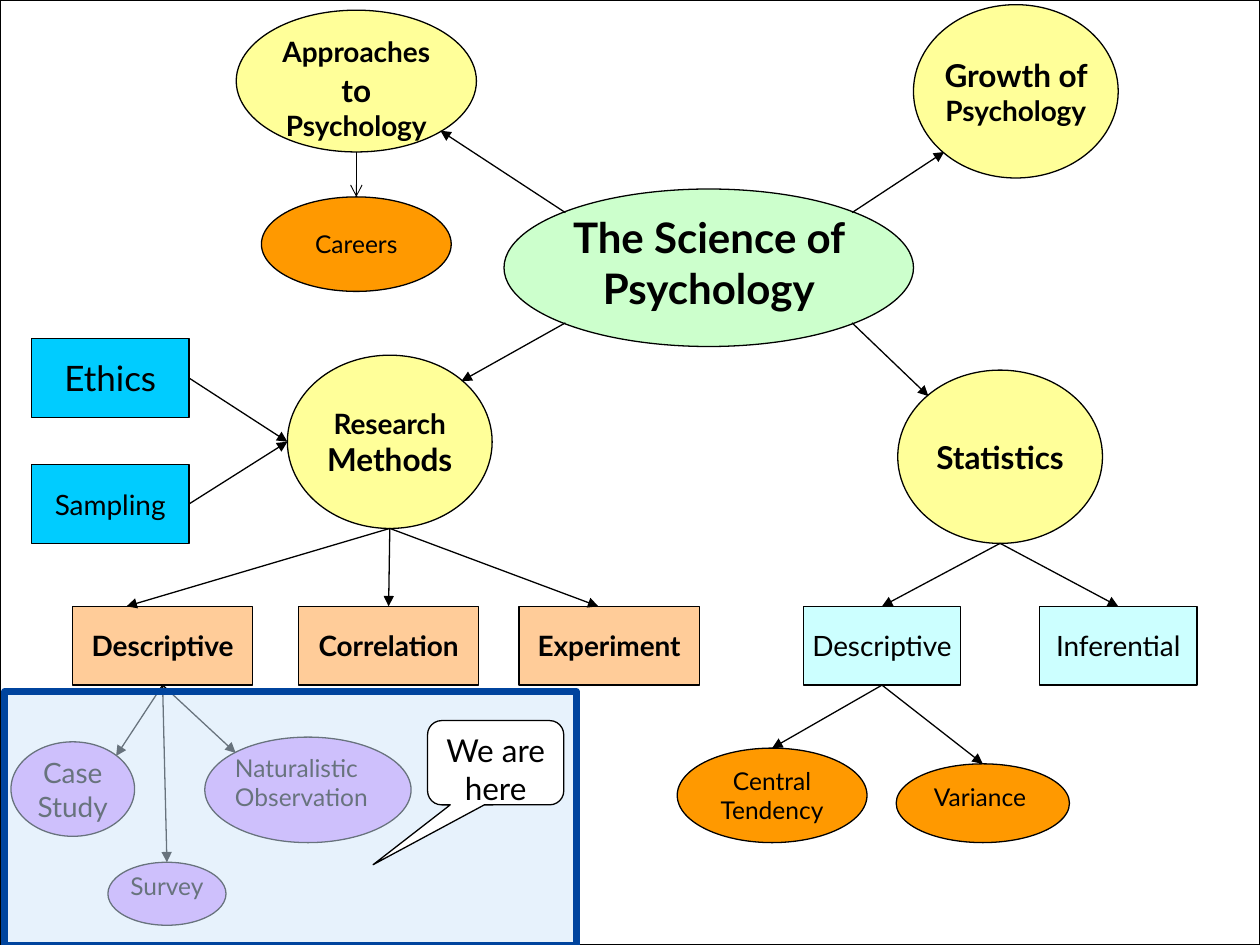
from lxml import etree
from pptx import Presentation
from pptx.dml.color import RGBColor
from pptx.enum.shapes import MSO_CONNECTOR, MSO_SHAPE
from pptx.enum.text import MSO_ANCHOR, PP_ALIGN
from pptx.oxml.ns import qn
from pptx.util import Inches, Pt

RECT, OVAL = MSO_SHAPE.RECTANGLE, MSO_SHAPE.OVAL
CALLOUT = MSO_SHAPE.ROUNDED_RECTANGULAR_CALLOUT
STRAIGHT = MSO_CONNECTOR.STRAIGHT
TOP, MIDDLE = MSO_ANCHOR.TOP, MSO_ANCHOR.MIDDLE
LEFT, CENTER = PP_ALIGN.LEFT, PP_ALIGN.CENTER
BLACK, WHITE = "000000", "FFFFFF"
GREEN, YELLOW, PEACH, VIOLET = "CCFFCC", "FFFF99", "FFCC99", "CC99FF"
AQUA, CYAN, ORANGE = "CCFFFF", "00CCFF", "FF9900"

prs = Presentation()
prs.slide_width, prs.slide_height = Inches(10), Inches(7.5)
slide = prs.slides.add_slide(prs.slide_layouts[5])
CELL = prs.slide_width / 160  # grid of 160 columns by 120 rows


def add_box(kind, place, fill, line=BLACK, weight=0.75):
    box = slide.shapes.add_shape(kind, *(round(v * CELL) for v in place))
    box.shadow.inherit = False
    box.fill.solid()
    box.fill.fore_color.rgb = RGBColor.from_string(fill)
    box.line.color.rgb = RGBColor.from_string(line)
    box.line.width = Pt(weight)
    return box


def write(box, runs, bold=False, align=CENTER, anchor=MIDDLE, inset=True):
    frame = box.text_frame
    frame.word_wrap = True
    frame.vertical_anchor = anchor
    frame.margin_left = frame.margin_right = Inches(0.1 if inset else 0)
    frame.margin_top = frame.margin_bottom = Inches(0.05 if inset else 0)
    paragraph = frame.paragraphs[0]
    paragraph.alignment = align
    paragraph.font.name = "Lato"
    paragraph.font.bold = bold
    paragraph.font.color.rgb = RGBColor.from_string(BLACK)
    if len(runs) == 1:
        paragraph.font.size = Pt(runs[0][1])
    for text, size in runs:
        run = paragraph.add_run()
        run.text = text
        if len(runs) > 1:
            run.font.size = Pt(size)


# Page frame and central topic
add_box(RECT, (0, 0, 160, 120), WHITE)
nodes = {"science": add_box(OVAL, (64, 24, 52, 20), GREEN)}
title = slide.shapes.title
title.left, title.top, title.width, title.height = (
    round(v * CELL) for v in (71.6, 26.9, 36.8, 14.2))
write(title, [("The Science of Psychology", 24)], bold=True, anchor=TOP, inset=False)
nodes["science"]._element.addnext(title._element)

# Topics: key, kind, place, fill, runs, bold, alignment, anchor, inset
BRANCH = 77  # row of the branch boxes
topics = [
    ("approaches", OVAL, (30, 1.3, 30.5, 18), YELLOW,
     [("Approaches", 16), (" ", 24), ("to ", 18), ("Psychology", 16)], True, CENTER, MIDDLE, False),
    ("growth", OVAL, (116, 0.6, 26, 22), YELLOW,
     [("Growth of ", 18), ("Psychology", 16)], True, CENTER, MIDDLE, False),
    ("research", OVAL, (36.5, 45.1, 26, 22), YELLOW,
     [("Research ", 16), ("Methods", 18)], True, CENTER, MIDDLE, False),
    ("statistics", OVAL, (114, 47, 26, 22), YELLOW,
     [("Statistics", 18)], True, CENTER, MIDDLE, False),
    ("descriptive", RECT, (9.2, BRANCH, 22.9, 10), PEACH,
     [("Descriptive", 16)], True, CENTER, MIDDLE, True),
    ("correlation", RECT, (37.9, BRANCH, 22.9, 10), PEACH,
     [("Correlation", 16)], True, CENTER, MIDDLE, True),
    ("experiment", RECT, (65.9, BRANCH, 22.9, 10), PEACH,
     [("Experiment", 16)], True, CENTER, MIDDLE, True),
    ("case", OVAL, (1.4, 94.2, 15.7, 12), VIOLET,
     [("Case Study", 16)], False, CENTER, TOP, False),
    ("survey", OVAL, (13.7, 109.5, 15, 8), VIOLET,
     [("Survey", 14)], False, CENTER, TOP, False),
    ("naturalistic", OVAL, (26, 93.6, 26.2, 13.4), VIOLET,
     [("Naturalistic Observation", 14)], False, LEFT, TOP, False),
    ("summary", RECT, (102, BRANCH, 20, 10), AQUA,
     [("Descriptive", 16)], False, CENTER, MIDDLE, False),
    ("inferential", RECT, (132, BRANCH, 20, 10), AQUA,
     [("Inferential", 16)], False, CENTER, MIDDLE, False),
    ("ethics", RECT, (4, 43, 20, 10), CYAN,
     [("Ethics", 20)], False, CENTER, MIDDLE, True),
    ("sampling", RECT, (4, 59, 20, 10), CYAN,
     [("Sampling", 16)], False, CENTER, MIDDLE, True),
    ("central", OVAL, (86, 95, 24.1, 12), ORANGE,
     [("Central Tendency", 14)], False, CENTER, MIDDLE, True),
    ("variance", OVAL, (113.8, 97, 22, 10), ORANGE,
     [("Variance", 14)], False, LEFT, TOP, True),
    ("careers", OVAL, (33.2, 25, 24.1, 12), ORANGE,
     [("Careers", 14)], False, CENTER, MIDDLE, True),
]
for key, kind, place, fill, runs, bold, align, anchor, inset in topics:
    nodes[key] = add_box(kind, place, fill)
    write(nodes[key], runs, bold, align, anchor, inset)

# Arrows: each end is a topic and a point given as shares of its box
NEAR, FAR = 0.15, 0.85
NORTH, SOUTH, WEST, EAST = (0.5, 0), (0.5, 1), (0, 0.5), (1, 0.5)
NW, NE, SW, SE = (NEAR, NEAR), (FAR, NEAR), (NEAR, FAR), (FAR, FAR)
arrows = [
    ("ethics", EAST, "research", WEST),
    ("sampling", EAST, "research", WEST),
    ("science", SW, "research", NE),
    ("science", SE, "statistics", NW),
    ("science", NW, "approaches", SE),
    ("science", NE, "growth", SW),
    ("research", SOUTH, "descriptive", (0.3, 0)),
    ("research", SOUTH, "correlation", NORTH),
    ("research", SOUTH, "experiment", (0.44, 0)),
    ("statistics", SOUTH, "summary", NORTH),
    ("statistics", SOUTH, "inferential", NORTH),
    ("descriptive", SOUTH, "case", NE),
    ("descriptive", SOUTH, "naturalistic", NW),
    ("descriptive", SOUTH, "survey", NORTH),
    ("summary", SOUTH, "central", NORTH),
    ("summary", SOUTH, "variance", NORTH),
    ("approaches", SOUTH, "careers", NORTH),
]
for source, start, target, end in arrows:
    ends = []
    for key, (across, down) in ((source, start), (target, end)):
        node = nodes[key]
        ends += [round(node.left + across * node.width), round(node.top + down * node.height)]
    open_head = target == "careers"
    arrow = slide.shapes.add_connector(STRAIGHT, *ends)
    arrow.line.color.rgb = RGBColor.from_string(BLACK)
    arrow.line.width = Pt(0.5 if open_head else 0.75)
    etree.SubElement(arrow.line._get_or_add_ln(), qn("a:tailEnd"),
                     type="arrow" if open_head else "triangle")
    etree.SubElement(arrow._element.spPr, qn("a:effectLst"))

# Translucent panel over the current section
panel = add_box(RECT, (0.6, 87.8, 72.6, 32.2), "D1E7FB", "00449E", 3.78)
tint = panel._element.spPr.find(qn("a:solidFill")).find(qn("a:srgbClr"))
etree.SubElement(tint, qn("a:alpha"), val="50000")

# Callout
here = add_box(CALLOUT, (54.3, 91.5, 17.3, 10.7), WHITE)
here.adjustments[0], here.adjustments[1] = -0.9, 1.21
write(here, [("We are here", 18)], anchor=TOP)

prs.save("out.pptx")
